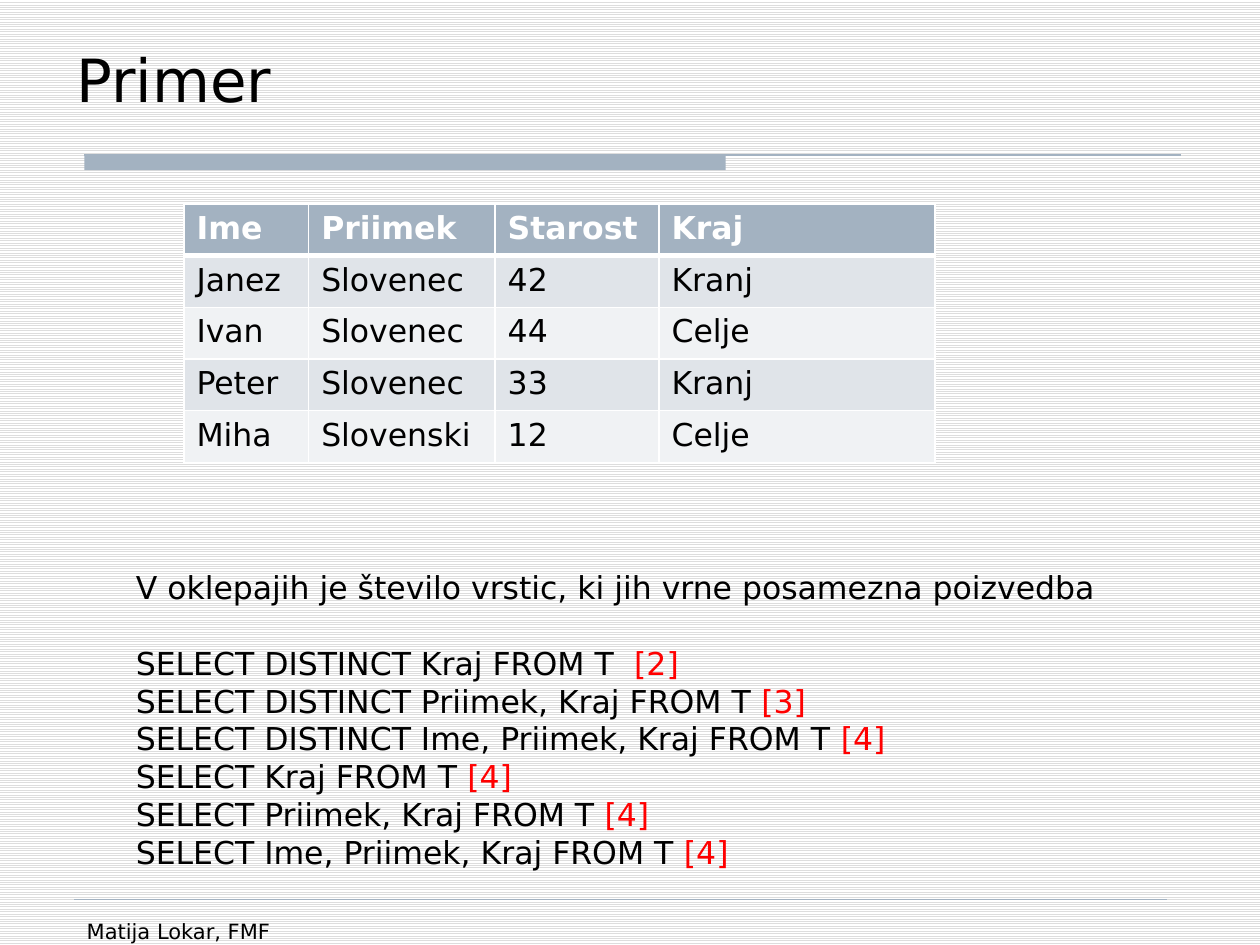
"""Build a slide on SELECT DISTINCT with a sample table and row counts."""
from lxml.etree import SubElement
from pptx import Presentation
from pptx.dml.color import RGBColor
from pptx.enum.dml import MSO_PATTERN
from pptx.enum.shapes import MSO_CONNECTOR, MSO_SHAPE
from pptx.enum.text import MSO_ANCHOR
from pptx.oxml.ns import qn
from pptx.util import Inches, Pt

BLACK, WHITE, RED, ACCENT = "000000", "FFFFFF", "FF0000", "A3B2C1"
BANDS = "E0E4E9", "F0F2F4"
PEOPLE = [
    ("Ime", "Priimek", "Starost", "Kraj"),
    ("Janez", "Slovenec", "42", "Kranj"),
    ("Ivan", "Slovenec", "44", "Celje"),
    ("Peter", "Slovenec", "33", "Kranj"),
    ("Miha", "Slovenski", "12", "Celje"),
]
QUERIES = [
    ("SELECT DISTINCT Kraj FROM T  ", "[2]"),
    ("SELECT DISTINCT Priimek, Kraj FROM T ", "[3]"),
    ("SELECT DISTINCT Ime, Priimek, Kraj FROM T ", "[4]"),
    ("SELECT Kraj FROM T ", "[4]"),
    ("SELECT Priimek, Kraj FROM T ", "[4]"),
    ("SELECT Ime, Priimek, Kraj FROM T ", "[4]"),
]


def rgb(value):
    return RGBColor.from_string(value)


class SlideBuilder:
    def __init__(self, slide, font="DejaVu Sans"):
        self.slide = slide
        self.font = font

    def background(self, fore, back):
        fill = self.slide.background.fill
        fill.patterned()
        fill.pattern = MSO_PATTERN.LIGHT_HORIZONTAL
        fill.fore_color.rgb, fill.back_color.rgb = rgb(fore), rgb(back)

    def bar(self, left, top, width, height, color):
        bar = self.slide.shapes.add_shape(
            MSO_SHAPE.RECTANGLE, *map(Inches, (left, top, width, height)))
        bar.shadow.inherit = False
        bar.fill.solid()
        bar.fill.fore_color.rgb = rgb(color)
        bar.line.fill.background()

    def rule(self, left, right, y, color, weight):
        rule = self.slide.shapes.add_connector(
            MSO_CONNECTOR.STRAIGHT, *map(Inches, (left, y, right, y)))
        rule.line.color.rgb = rgb(color)
        rule.line.width = Pt(weight)
        SubElement(rule._element.spPr, qn("a:effectLst"))

    def run(self, paragraph, text, size, color=BLACK, bold=False):
        run = paragraph.add_run()
        run.text = text
        style = {"name": self.font, "size": Pt(size), "bold": bold}
        for name, value in style.items():
            setattr(run.font, name, value)
        run.font.color.rgb = rgb(color)

    def text(self, left, top, width, height, paragraphs, size,
             anchor=MSO_ANCHOR.TOP, first_gap=0):
        box = self.slide.shapes.add_textbox(
            *map(Inches, (left, top, width, height)))
        frame = box.text_frame
        frame.word_wrap = True
        frame.vertical_anchor = anchor
        for index, runs in enumerate(paragraphs):
            paragraph = frame.add_paragraph() if index else frame.paragraphs[0]
            for text, color in runs:
                self.run(paragraph, text, size, color)
        frame.paragraphs[0].space_after = Pt(first_gap)

    def borders(self, cell, color, weights):
        props = cell._tc.get_or_add_tcPr()
        for side, weight in weights.items():
            line = SubElement(props, qn(f"a:ln{side}"), w=str(Pt(weight)))
            fill = SubElement(line, qn("a:solidFill"))
            SubElement(fill, qn("a:srgbClr"), val=color)

    def table(self, left, top, widths, row_height, rows, size):
        table = self.slide.shapes.add_table(
            len(rows), len(widths), Inches(left), Inches(top),
            Inches(sum(widths)), Inches(row_height * len(rows))).table
        for column, width in zip(table.columns, widths):
            column.width = Inches(width)
        for r, values in enumerate(rows):
            header = r == 0
            weights = {"L": 1, "R": 1, "T": 3 if r == 1 else 1,
                       "B": 3 if header else 1}
            for c, value in enumerate(values):
                cell = table.cell(r, c)
                self.borders(cell, WHITE, weights)
                cell.fill.solid()
                cell.fill.fore_color.rgb = rgb(
                    ACCENT if header else BANDS[(r - 1) % 2])
                self.run(cell.text_frame.paragraphs[0], value, size,
                         WHITE if header else BLACK, header)


def main():
    deck = Presentation()
    deck.slide_width, deck.slide_height = Inches(10), Inches(7.5)
    builder = SlideBuilder(deck.slides.add_slide(deck.slide_layouts[6]))

    builder.background("DDDDDD", WHITE)
    builder.bar(0.67, 1.23, 5.09, 0.12, ACCENT)
    builder.rule(0.67, 9.37, 1.23, ACCENT, 0.75)
    builder.rule(0.59, 9.26, 7.14, ACCENT, 0.25)
    builder.text(0.51, 0.21, 8.75, 0.75, [[("Primer", BLACK)]], 34,
                 anchor=MSO_ANCHOR.BOTTOM)
    builder.table(1.46, 1.62, (0.99, 1.48, 1.3, 2.19), 0.41, PEOPLE, 18)
    builder.text(0.59, 7.24, 2.17, 0.52, [[("Matija Lokar, FMF", BLACK)]], 12)
    intro = "V oklepajih je število vrstic, ki jih vrne posamezna poizvedba"
    answers = [[(query, BLACK), (count, RED)] for query, count in QUERIES]
    builder.text(0.98, 4.46, 8.43, 2.52, [[(intro, BLACK)], *answers], 18,
                 first_gap=21.6)
    deck.save("out.pptx")


if __name__ == "__main__":
    main()
